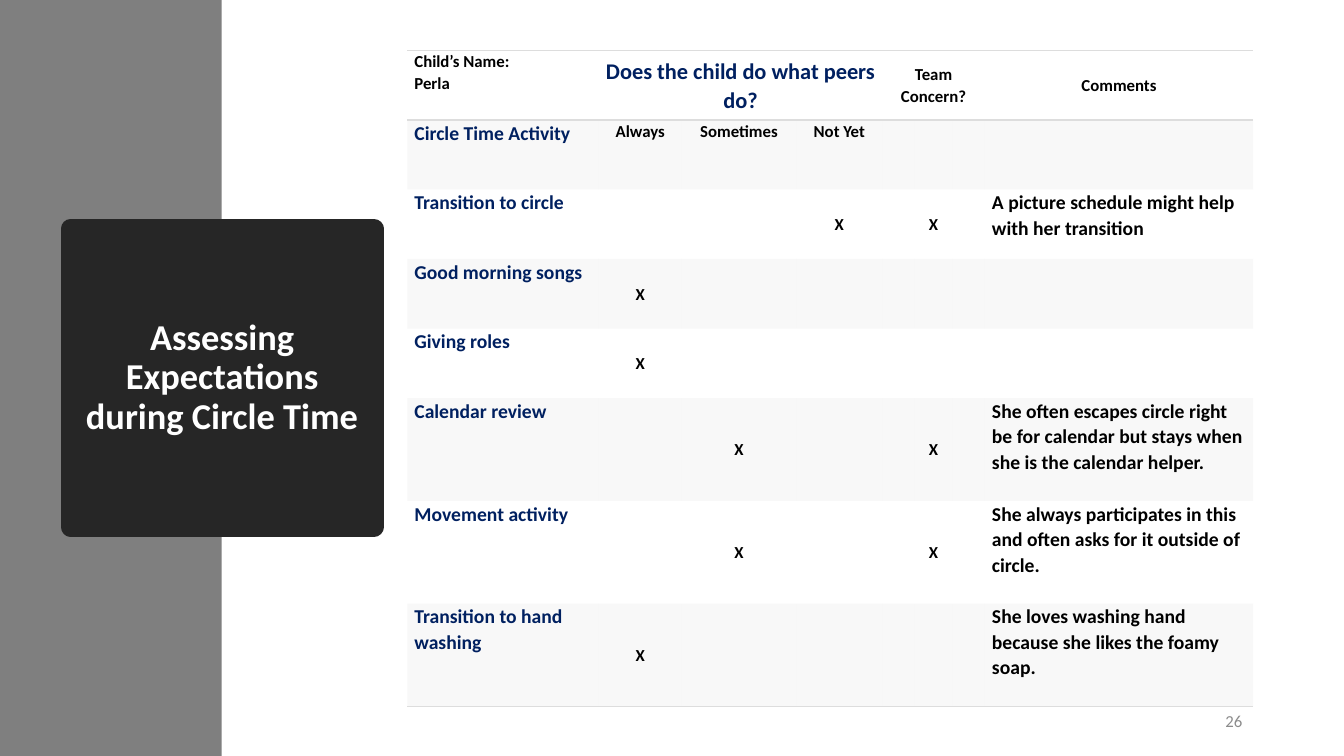
import lxml.etree
import pptx
import pptx.dml.color
import pptx.enum.shapes
import pptx.enum.text
import pptx.util
from pptx.oxml.ns import qn
from pptx.util import Inches

ALIGN = pptx.enum.text.PP_ALIGN
ANCHOR = pptx.enum.text.MSO_ANCHOR
SHAPE = pptx.enum.shapes.MSO_SHAPE
FONT = "Calibri"
NAVY, BLACK, WHITE, DARK = "002060", "000000", "FFFFFF", "262626"
SIDEBAR, RULE, PAGE_GREY = "7F7F7F", "DDDDDD", "8C8C8C"
PLAIN_STYLE = "{2D5ABB26-0587-4C30-8999-92F81FD0307C}"

COLUMN_WIDTHS = [1.9, 0.82, 1.14, 0.85, 0.32, 0.38, 0.32, 2.66]
ROW_HEIGHTS = [0.69] * 5 + [1.02] * 3
ALWAYS, SOMETIMES, NOT_YET, CONCERN, COMMENTS = 1, 2, 3, 5, 7

# Activity, columns marked with X, comment
ACTIVITIES = [
    ("Transition to circle", [NOT_YET, CONCERN],
     "A picture schedule might help with her transition"),
    ("Good morning songs", [ALWAYS], ""),
    ("Giving roles", [ALWAYS], ""),
    ("Calendar review", [SOMETIMES, CONCERN],
     "She often escapes circle right be for calendar but stays when "
     "she is the calendar helper."),
    ("Movement activity", [SOMETIMES, CONCERN],
     "She always participates in this and often asks for it outside of circle."),
    ("Transition to hand washing", [ALWAYS],
     "She loves washing hand because she likes the foamy soap."),
]


def color(value):
    return pptx.dml.color.RGBColor.from_string(value)


def write(frame, text, size, text_color, align=ALIGN.LEFT, spacing=1.0, bold=True):
    frame.text = text
    frame.word_wrap = True
    for para in frame.paragraphs:
        para.alignment = align
        para.line_spacing = spacing
        for span in para.runs:
            span.font.name = FONT
            span.font.size = pptx.util.Pt(size)
            span.font.bold = bold
            span.font.color.rgb = color(text_color)


def add_block(page, left, top, width, height, fill):
    box = page.shapes.add_shape(SHAPE.RECTANGLE, Inches(left), Inches(top),
                                Inches(width), Inches(height))
    box.shadow.inherit = False
    box.fill.solid()
    box.fill.fore_color.rgb = color(fill)
    box.line.fill.background()
    return box


def add_title(page):
    box = add_block(page, 0.7, 2.27, 3.01, 2.96, DARK)
    # A thick line with round joins softens the corners
    box.line.color.rgb = color(DARK)
    box.line.width = pptx.util.Pt(13.75)
    lxml.etree.SubElement(box.line._get_or_add_ln(), qn("a:round"))
    box.text_frame.vertical_anchor = ANCHOR.MIDDLE
    write(box.text_frame, "Assessing Expectations during Circle Time", 26, WHITE,
          ALIGN.CENTER, 0.9)


def add_page_number(page, number):
    box = page.shapes.add_textbox(Inches(9.42), Inches(6.95), Inches(3), Inches(0.4))
    box.text_frame.vertical_anchor = ANCHOR.MIDDLE
    write(box.text_frame, number, 12, PAGE_GREY, ALIGN.RIGHT, bold=False)


def write_cell(cell, text, size, text_color, align=ALIGN.LEFT, anchor=ANCHOR.TOP):
    cell.margin_left = cell.margin_right = Inches(0.07)
    cell.margin_top = cell.margin_bottom = 0
    cell.vertical_anchor = anchor
    write(cell.text_frame, text, size, text_color, align, 1.07)


def shade_cell(cell):
    cell.fill.solid()
    cell.fill.fore_color.rgb = color(RULE)
    tint = cell._tc.tcPr.find(".//" + qn("a:srgbClr"))
    lxml.etree.SubElement(tint, qn("a:alpha"), val="20000")


def rule_cell(cell, sides):
    properties = cell._tc.get_or_add_tcPr()
    for position, side in enumerate(sides):
        line = lxml.etree.Element(qn("a:ln" + side), w="12700")
        fill = lxml.etree.SubElement(line, qn("a:solidFill"))
        lxml.etree.SubElement(fill, qn("a:srgbClr"), val=RULE)
        properties.insert(position, line)


def add_grid(page):
    frame = page.shapes.add_table(
        len(ROW_HEIGHTS), len(COLUMN_WIDTHS), Inches(4.04), Inches(0.5),
        Inches(sum(COLUMN_WIDTHS)), Inches(sum(ROW_HEIGHTS)))
    table = frame.table
    table.first_row = table.horz_banding = False
    table._tbl.tblPr.find(qn("a:tableStyleId")).text = PLAIN_STYLE
    for column, width in zip(table.columns, COLUMN_WIDTHS):
        column.width = Inches(width)
    for row, height in zip(table.rows, ROW_HEIGHTS):
        row.height = Inches(height)

    # Shaded bands on every second row, rules around the header and at the foot
    last_row = len(ROW_HEIGHTS) - 1
    for r in range(len(ROW_HEIGHTS)):
        for c in range(len(COLUMN_WIDTHS)):
            cell = table.cell(r, c)
            if r % 2:
                shade_cell(cell)
            rule_cell(cell, {0: "TB", last_row: "B"}.get(r, ""))
    return table


def fill_headings(table):
    table.cell(0, 1).merge(table.cell(0, 3))
    table.cell(0, 4).merge(table.cell(0, 6))
    write_cell(table.cell(0, 0), "Child’s Name:\nPerla", 12, BLACK)
    for column, text, size, text_color in [
            (1, "Does the child do what peers do?", 16, NAVY),
            (4, "Team Concern?", 12, BLACK),
            (COMMENTS, "Comments", 12, BLACK)]:
        write_cell(table.cell(0, column), text, size, text_color,
                   ALIGN.CENTER, ANCHOR.MIDDLE)
    write_cell(table.cell(1, 0), "Circle Time Activity", 14, NAVY)
    for column, text in [(ALWAYS, "Always"), (SOMETIMES, "Sometimes"),
                         (NOT_YET, "Not Yet")]:
        write_cell(table.cell(1, column), text, 12, BLACK, ALIGN.CENTER)


def fill_activities(table):
    for r, (activity, marks, comment) in enumerate(ACTIVITIES, start=2):
        write_cell(table.cell(r, 0), activity, 14, NAVY)
        for column in marks:
            write_cell(table.cell(r, column), "X", 12, BLACK,
                       ALIGN.CENTER, ANCHOR.MIDDLE)
        if comment:
            write_cell(table.cell(r, COMMENTS), comment, 14, BLACK)


def main():
    deck = pptx.Presentation()
    deck.slide_width = Inches(13.33)
    deck.slide_height = Inches(7.5)
    page = deck.slides.add_slide(deck.slide_layouts[6])

    # Sidebar and title
    add_block(page, 0, 0, 2.2, 7.5, SIDEBAR)
    add_title(page)

    # Assessment table
    table = add_grid(page)
    fill_headings(table)
    fill_activities(table)

    add_page_number(page, "26")
    deck.save("out.pptx")


if __name__ == "__main__":
    main()
